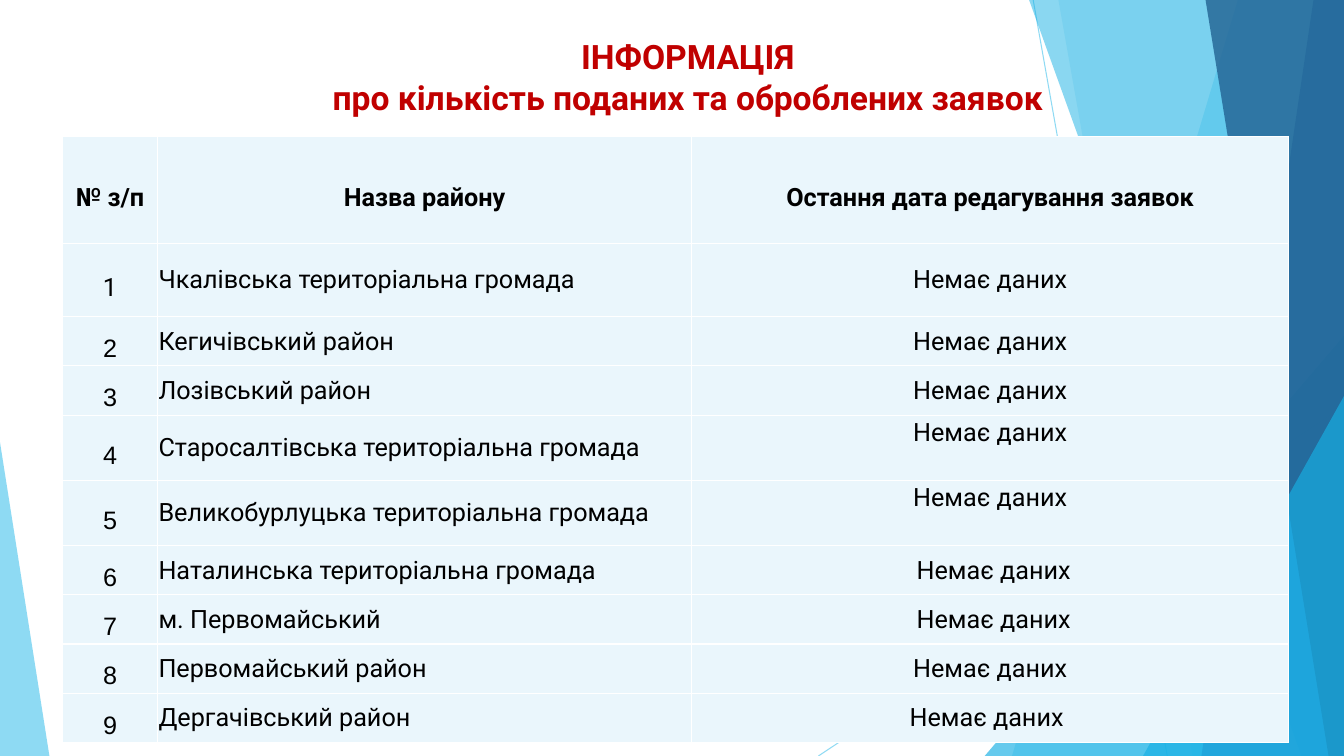
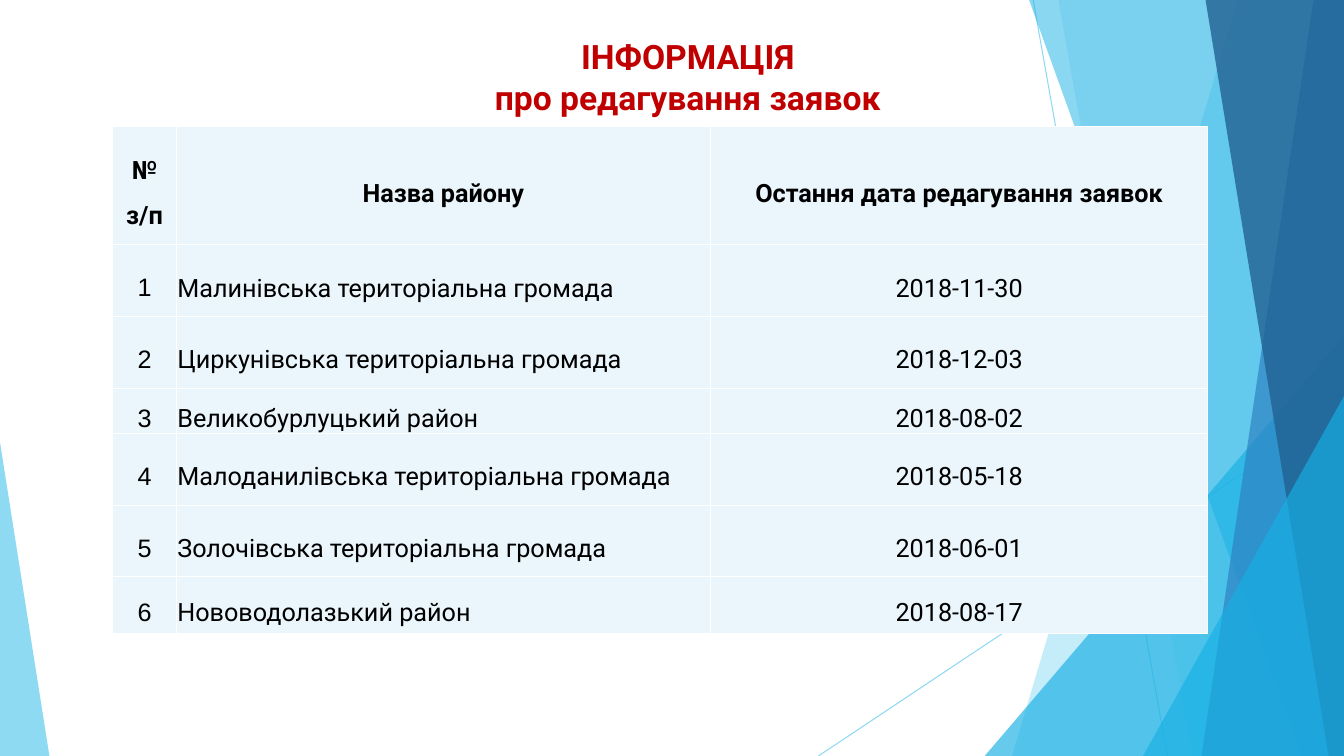
from copy import deepcopy

from lxml.etree import SubElement
from pptx import Presentation
from pptx.enum.shapes import MSO_CONNECTOR as Connector, MSO_SHAPE as Shape
from pptx.enum.text import MSO_ANCHOR as Anchor, MSO_AUTO_SIZE as AutoSize, PP_ALIGN as Align
from pptx.dml.color import RGBColor
from pptx.oxml.ns import qn
from pptx.util import Pt

WIDTH, HEIGHT = 960, 540
SKY, CYAN, BLUE, NAVY = "5FCBEF", "17B0E4", "2E83C3", "226292"
RED, BLACK, WHITE, PALE = "C00000", "000000", "FFFFFF", "EAF6FC"


def paint(fill, color, opacity=100):
    fill.solid()
    fill.fore_color.rgb = RGBColor.from_string(color)
    if opacity < 100:
        tint = fill._xPr.find(qn("a:solidFill"))[0]
        SubElement(tint, qn("a:alpha"), val=str(opacity * 1000))


def write(frame, text, size=18, font="Roboto", color=BLACK, bold=False, align=Align.CENTER, spacing=1.0):
    para = frame.paragraphs[0]
    para.text = text
    para.alignment = align
    para.line_spacing = spacing
    for span in para.runs:
        span.font.size = Pt(size)
        span.font.name = font
        span.font.bold = bold
        paint(span.font.fill, color)
    for line_break in para._p.findall(qn("a:br")):
        line_break.append(deepcopy(para.runs[0]._r.rPr))


deck = Presentation()
deck.slide_width, deck.slide_height = Pt(WIDTH), Pt(HEIGHT)
layout = deck.slide_layouts[5]

title = layout.placeholders[0]
title.left, title.top, title.width, title.height = Pt(44.6), Pt(22.3), Pt(893.5), Pt(103.7)
title.text_frame.vertical_anchor = Anchor.TOP
title.text_frame.auto_size = AutoSize.NONE

pages = [deck.slides.add_slide(layout) for _ in range(2)]
canvas = pages[0].shapes
decoration = []

for ends in [(738, 0, 833.8, HEIGHT), (WIDTH, 290, 584.6, HEIGHT)]:
    ray = canvas.add_connector(Connector.STRAIGHT, *[Pt(value) for value in ends])
    ray.line.width = Pt(0.75)
    paint(ray.line.fill, SKY, 70)
    SubElement(ray.element.spPr, qn("a:effectLst"))
    decoration.append(ray)

facets = [
    ("band", (884.2, 722.9), SKY, 36),
    ("band", (756, 851.8), SKY, 20),
    ("triangle", (703.4, 239.8, WIDTH, 1), CYAN, 66),
    ("band", (735.1, 929.5), CYAN, 50),
    ("band", (938.2, 858.2), BLUE, 70),
    ("band", (861.1, 949), NAVY, 80),
    ("triangle", (816.5, 283, WIDTH, 1), CYAN, 66),
    ("triangle", (0, 316, 35.3, 0), SKY, 70),
]
for kind, geometry, color, opacity in facets:
    if kind == "band":
        top_x, bottom_x = geometry
        outline = canvas.build_freeform(Pt(top_x), 0)
        corners = [(WIDTH, 0), (WIDTH, HEIGHT), (bottom_x, HEIGHT)]
        outline.add_line_segments([(Pt(x), Pt(y)) for x, y in corners])
        facet = outline.convert_to_shape()
    else:
        left, top, right, peak = geometry
        facet = canvas.add_shape(
            Shape.ISOSCELES_TRIANGLE, Pt(left), Pt(top), Pt(right - left), Pt(HEIGHT - top))
        facet.adjustments[0] = peak
    paint(facet.fill, color, opacity)
    facet.line.fill.background()
    facet.shadow.inherit = False
    decoration.append(facet)

for shape in decoration:
    layout.shapes.element.append(shape.element)

NO_DATA = "Немає даних"
HEADER = ("№ з/п", "Назва району", "Остання дата редагування заявок")
reports = [
    {
        "title": "ІНФОРМАЦІЯ\nпро кількість поданих та оброблених заявок",
        "corner": (44.6, 97.4),
        "columns": (68, 381.5, 426.5),
        "heights": (76.3, 52.5, 35.2, 35.2, 46.6, 46.6, 35.2, 35.2, 35.2, 35.2),
        "spacing": 1.0,
        "top_rows": (4, 5),
        "indents": {6: (5, 0), 7: (5, 0), 9: (0, 5)},
        "first_font": "Roboto",
        "rows": [
            ("Чкалівська територіальна громада", NO_DATA),
            ("Кегичівський район", NO_DATA),
            ("Лозівський район", NO_DATA),
            ("Старосалтівська територіальна громада", NO_DATA),
            ("Великобурлуцька територіальна громада", NO_DATA),
            ("Наталинська територіальна громада", NO_DATA),
            ("м. Первомайський", NO_DATA),
            ("Первомайський район", NO_DATA),
            ("Дергачівський район", NO_DATA),
        ],
    },
    {
        "title": "ІНФОРМАЦІЯ\nпро редагування заявок",
        "corner": (80.5, 90.4),
        "columns": (45.5, 381.5, 355.3),
        "heights": (84.5, 51.2, 51.2, 29, 51.2, 51.2, 40.3),
        "spacing": 1.5,
        "top_rows": (),
        "indents": {},
        "first_font": "Arial",
        "rows": [
            ("Малинівська територіальна громада", "2018-11-30"),
            ("Циркунівська територіальна громада", "2018-12-03"),
            ("Великобурлуцький район", "2018-08-02"),
            ("Малоданилівська територіальна громада", "2018-05-18"),
            ("Золочівська територіальна громада", "2018-06-01"),
            ("Нововодолазький район", "2018-08-17"),
        ],
    },
]

for page, report in zip(pages, reports):
    write(page.shapes.title.text_frame, report["title"], size=24, color=RED, bold=True)

    columns, heights = report["columns"], report["heights"]
    left, top = report["corner"]
    table = page.shapes.add_table(
        len(heights), len(columns), Pt(left), Pt(top), Pt(sum(columns)), Pt(sum(heights))).table
    table.first_row = table.horz_banding = False
    for column, width in zip(table.columns, columns):
        column.width = Pt(width)
    for row, height in zip(table.rows, heights):
        row.height = Pt(height)

    lines = [HEADER] + [(str(number), *entry) for number, entry in enumerate(report["rows"], 1)]
    for row_index, line in enumerate(lines):
        for column_index, text in enumerate(line):
            cell = table.cell(row_index, column_index)
            is_header, is_number = row_index == 0, column_index == 0
            is_name, is_date = column_index == 1, column_index == 2

            indent = report["indents"].get(row_index, (0, 0)) if is_date else (0, 0)
            cell.margin_left, cell.margin_right = [Pt(0.7 + extra) for extra in indent]
            cell.margin_top, cell.margin_bottom = Pt(0.7), 0
            cell.vertical_anchor = Anchor.MIDDLE
            if is_date and row_index in report["top_rows"]:
                cell.vertical_anchor = Anchor.TOP
                cell.margin_top = Pt(2)

            font = "Roboto"
            if is_number and not is_header:
                font = report["first_font"] if row_index == 1 else "Arial"
            write(
                cell.text_frame, text, font=font, bold=is_header,
                align=Align.LEFT if is_name and not is_header else Align.CENTER,
                spacing=1.5 if is_header or is_number else report["spacing"])

            properties = cell._tc.get_or_add_tcPr()
            for side in ("lnL", "lnR", "lnT", "lnB"):
                border = SubElement(properties, qn("a:" + side), w=str(Pt(1)))
                border_fill = SubElement(border, qn("a:solidFill"))
                SubElement(border_fill, qn("a:srgbClr"), val=WHITE)
            paint(cell.fill, PALE)

deck.save("out.pptx")
